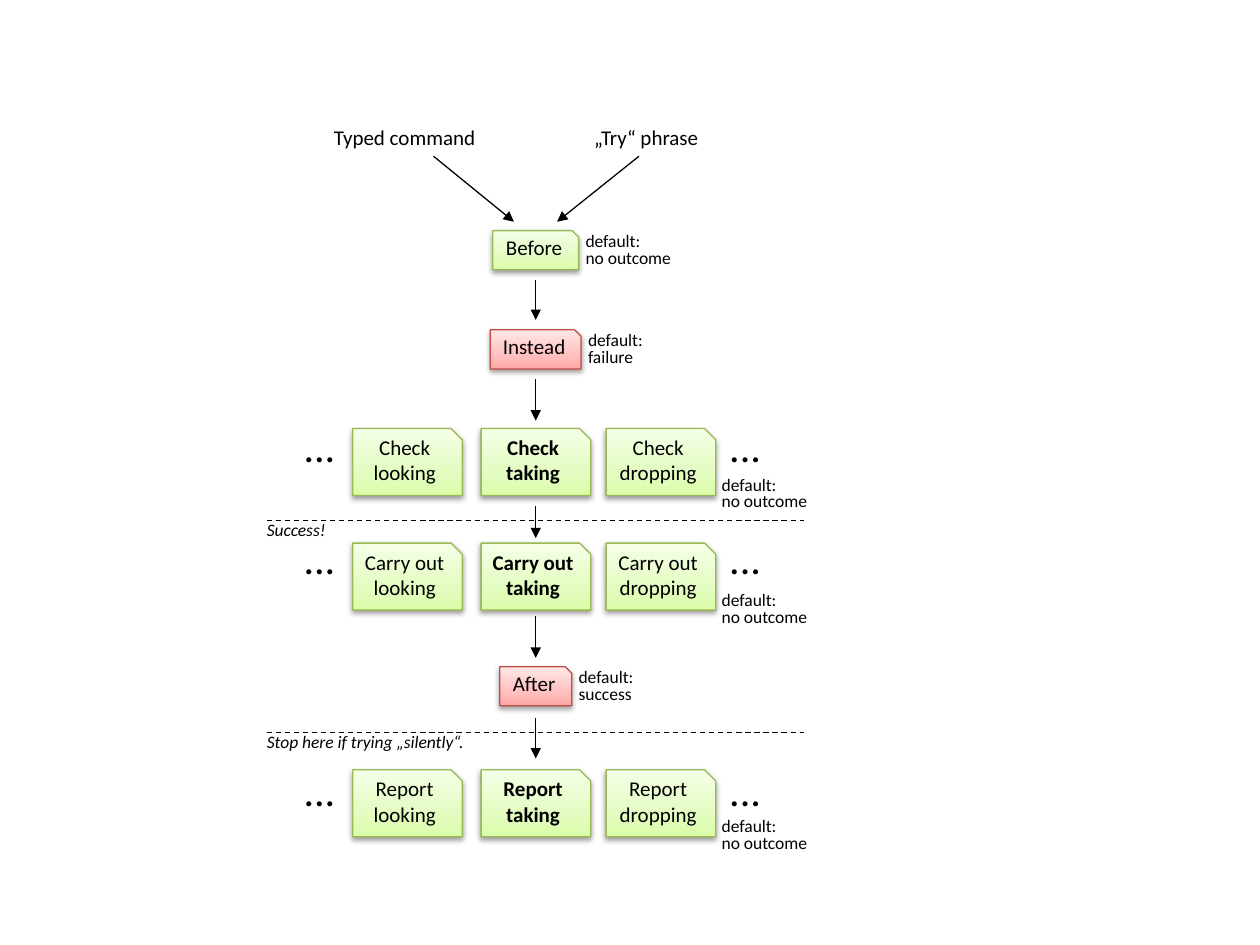
import pptx
import pptx.util
import pptx.dml.color
import pptx.enum.dml
import pptx.enum.shapes
import pptx.enum.text
import pptx.oxml
import pptx.oxml.ns
from dataclasses import dataclass

Cm, Pt = pptx.util.Cm, pptx.util.Pt
Align = pptx.enum.text.PP_ALIGN
NS = pptx.oxml.ns.nsdecls("a")


@dataclass
class Theme:
    font: str = "Calibri"
    ink: str = "000000"
    body: int = 12
    note: int = 10
    dots: int = 24
    line: float = 0.75
    # edge colour, then gradient stops from bottom to top
    green: tuple = ("98B955", "DAFDA7", "E4FCC2", "F5FFE7")
    red: tuple = ("BF4C48", "FFA6A5", "FFC0BF", "FFE7E7")


theme = Theme()
rgb = pptx.dml.color.RGBColor.from_string

deck = pptx.Presentation()
deck.slide_width, deck.slide_height = Cm(25.4), Cm(19.05)
slide = deck.slides.add_slide(deck.slide_layouts[6])
shapes = slide.shapes


def write(x, y, w, h, text, size=theme.body, look=None, bold=False, wrap=False,
          pad=None, italic=False, space=None):
    """Add a text box, or a snipped box when look gives its colours."""
    place = Cm(x), Cm(y), Cm(w), Cm(h)
    if look:
        kind = pptx.enum.shapes.MSO_SHAPE.SNIP_1_RECTANGLE
        box = shapes.add_shape(kind, *place)
        box.fill.gradient()
        box.fill.gradient_angle = 90
        stops = box._element.spPr.find(".//" + pptx.oxml.ns.qn("a:gsLst"))
        for stop in list(stops):
            stops.remove(stop)
        for pos, tint in zip((0, 35000, 100000), look[1:]):
            stops.append(pptx.oxml.parse_xml(
                f'<a:gs {NS} pos="{pos}"><a:srgbClr val="{tint}"/></a:gs>'))
        box.line.color.rgb = rgb(look[0])
        box.line.width = Pt(theme.line)
        box.shadow.inherit = False
        glow = box._element.spPr.find(pptx.oxml.ns.qn("a:effectLst"))
        glow.append(pptx.oxml.parse_xml(
            f'<a:outerShdw {NS} blurRad="40000" dist="20000" dir="5400000" '
            f'rotWithShape="0"><a:srgbClr val="{theme.ink}">'
            '<a:alpha val="38000"/></a:srgbClr></a:outerShdw>'))
    else:
        box = shapes.add_textbox(*place)
    frame = box.text_frame
    frame.text = text
    frame.word_wrap = wrap
    frame.auto_size = pptx.enum.text.MSO_AUTO_SIZE.SHAPE_TO_FIT_TEXT
    if look:
        frame.vertical_anchor = pptx.enum.text.MSO_ANCHOR.MIDDLE
    if pad:
        (frame.margin_left, frame.margin_top,
         frame.margin_right, frame.margin_bottom) = map(Cm, pad)
    for par in frame.paragraphs:
        par.alignment = Align.CENTER if look else Align.LEFT
        if space:
            par.line_spacing = space
        font = par.font
        font.name, font.size = theme.font, Pt(size)
        font.bold, font.italic = bold, italic
        font.color.rgb = rgb(theme.ink)


def draw(x1, y1, x2, y2, dash=False):
    """Add a dashed line or an arrow."""
    line = shapes.add_connector(pptx.enum.shapes.MSO_CONNECTOR.STRAIGHT,
                                Cm(x1), Cm(y1), Cm(x2), Cm(y2))
    line.line.color.rgb = rgb(theme.ink)
    line.line.width = Pt(theme.line)
    if dash:
        line.line.dash_style = pptx.enum.dml.MSO_LINE.DASH
    else:
        line.line._get_or_add_ln().append(
            pptx.oxml.parse_xml(f'<a:tailEnd {NS} type="triangle"/>'))
    line._element.spPr.append(pptx.oxml.parse_xml(f"<a:effectLst {NS}/>"))


mid = 10.8
tight = dict(size=theme.note, pad=(0, 0, 0, 0), space=0.8)

# Two ways in
write(6.48, 2.39, 3.4, 0.76, "Typed command")
write(11.73, 2.39, 2.64, 0.76, "„Try“ phrase")
draw(8.74, 3.15, 10.36, 4.47)
draw(12.88, 3.15, 11.23, 4.47)

# Single steps with their defaults
for name, y, w, look, result, span in (
        ("Before", 4.65, 1.73, theme.green, "no outcome", 1.75),
        ("Instead", 6.65, 1.83, theme.red, "failure", 1.12),
        ("After", 13.44, 1.45, theme.red, "success", 1.12)):
    write(mid - w / 2, y, w, 0.79, name, look=look, pad=(0.25, 0, 0.25, 0.2))
    write(mid + w / 2 + 0.14, y + 0.07, span, 0.69, f"default:\n{result}", **tight)

# Rows of steps, one box for each action
for name, y, top, low in (("Check", 8.64, 8.36, 9.63),
                          ("Carry out", 10.95, 10.62, 11.96),
                          ("Report", 15.52, 15.29, 16.51)):
    for act, x in (("looking", 7.11), ("taking", 9.7), ("dropping", 12.22)):
        write(x, y, 2.21, 1.35, f"{name}\n{act}", look=theme.green,
              bold=act == "taking", wrap=True, pad=(0, 0, 0, 0.2))
    for x in (5.87, 14.45):
        write(x, top, 1.17, 1.27, "...", size=theme.dots)
    write(14.55, low, 1.75, 0.69, "default:\nno outcome", **tight)

# Arrows down the middle
for start, end in ((5.64, 6.45), (7.65, 8.48), (10.21, 10.85),
                   (12.42, 13.26), (14.48, 15.29)):
    draw(mid, start, mid, end)

# Dashed borders between stages
for y, w, text in ((10.49, 1.8, "Success!"),
                   (14.76, 4.67, "Stop here if trying „silently“.")):
    draw(5.38, y, 16.21, y, dash=True)
    write(5.13, y - 0.15, w, 0.69, text, size=theme.note, italic=True)

deck.save("out.pptx")
